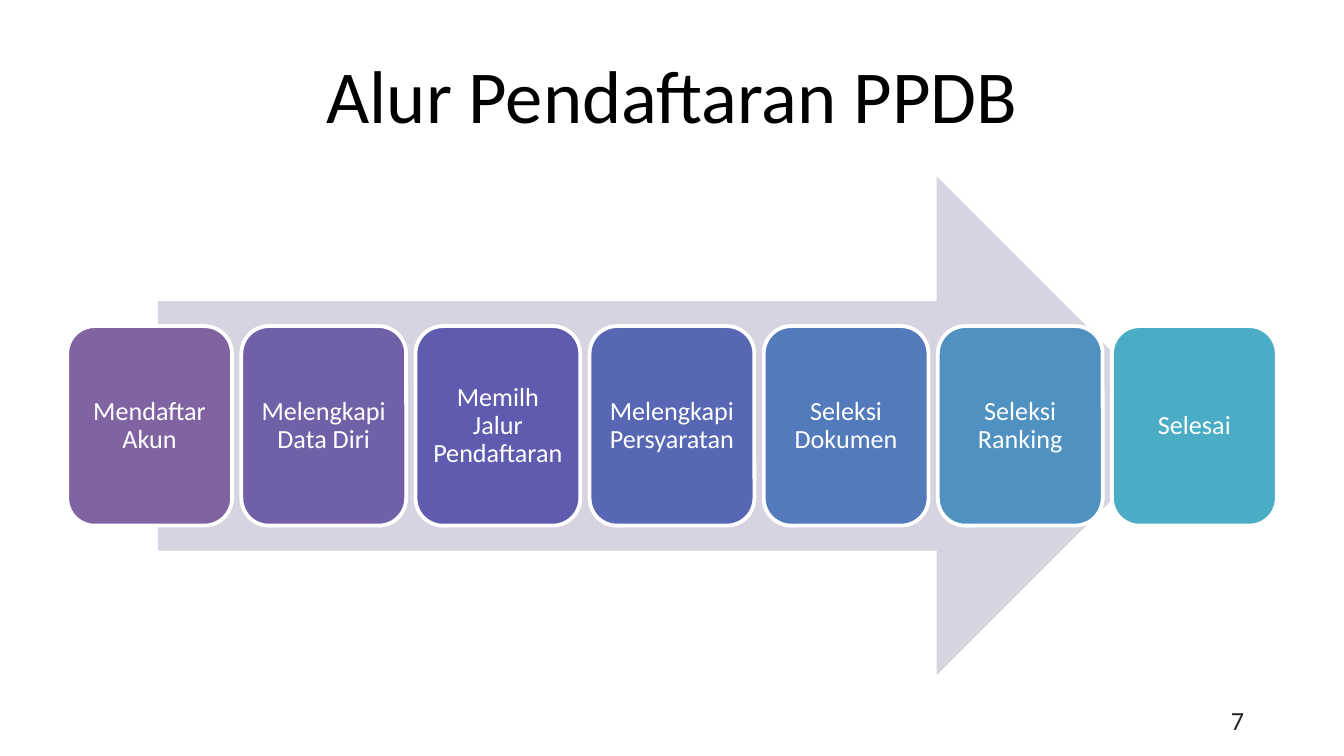
from dataclasses import dataclass

from pptx import Presentation
from pptx.dml.color import RGBColor as Rgb
from pptx.enum.shapes import MSO_SHAPE as Kind
from pptx.enum.text import MSO_ANCHOR as Anchor, PP_ALIGN as Align
from pptx.util import Pt


@dataclass(frozen=True)
class Theme:
    font: str = "Calibri"
    black: str = "000000"
    white: str = "FFFFFF"
    grey: str = "262626"
    arrow: str = "D8D3E0"
    title: int = 40
    body: int = 14


STEPS = [
    ("Mendaftar Akun", "8064A2"),
    ("Melengkapi Data Diri", "7160A8"),
    ("Memilh Jalur Pendaftaran", "5F5BAE"),
    ("Melengkapi Persyaratan", "5767B4"),
    ("Seleksi Dokumen", "537ABA"),
    ("Seleksi Ranking", "4F91C0"),
    ("Selesai", "4BACC6"),
]


class Deck:
    """Holds the theme and the slide being filled; boxes are in points."""

    def __init__(self, theme, slide):
        self.theme, self.slide = theme, slide

    def text(self, shape, words, size, color, space=1.0):
        frame = shape.text_frame
        frame.word_wrap = True
        frame.vertical_anchor = Anchor.MIDDLE
        para = frame.paragraphs[0]
        para.alignment = Align.CENTER
        para.line_spacing = space
        run = para.add_run()
        run.text = words
        run.font.name = self.theme.font
        run.font.size = Pt(size)
        run.font.color.rgb = Rgb.from_string(color)

    def title(self, words, left, top, width, height):
        shape = self.slide.shapes.title
        shape.left, shape.top = Pt(left), Pt(top)
        shape.width, shape.height = Pt(width), Pt(height)
        self.text(shape, words, self.theme.title, self.theme.black)

    def label(self, words, *box):
        shape = self.slide.shapes.add_textbox(*map(Pt, box))
        self.text(shape, words, self.theme.body, self.theme.grey)

    def shape(self, kind, fill, *box):
        shape = self.slide.shapes.add_shape(kind, *map(Pt, box))
        shape.shadow.inherit = False
        shape.fill.solid()
        shape.fill.fore_color.rgb = Rgb.from_string(fill)
        shape.line.fill.background()
        return shape

    def arrow(self, *box):
        self.shape(Kind.RIGHT_ARROW, self.theme.arrow, *box)

    def step(self, words, fill, *box):
        card = self.shape(Kind.ROUNDED_RECTANGLE, fill, *box)
        card.line.color.rgb = Rgb.from_string(self.theme.white)
        card.line.width = Pt(2)
        frame = card.text_frame
        frame.margin_left = frame.margin_right = Pt(4.2)
        frame.margin_top = frame.margin_bottom = Pt(4.2)
        self.text(card, words, self.theme.body, self.theme.white, 0.9)


def main():
    prs = Presentation()
    prs.slide_width, prs.slide_height = Pt(720), Pt(405)
    deck = Deck(Theme(), prs.slides.add_slide(prs.slide_layouts[5]))

    deck.title("Alur Pendaftaran PPDB", 36, 16.5, 648, 67.5)
    deck.label("7", 642, 375, 42, 21.6)
    deck.arrow(84.6, 94.5, 550.8, 267.3)

    left, right, width = 36, 684, 88.3
    pitch = (right - left - width) / (len(STEPS) - 1)
    for i, (words, fill) in enumerate(STEPS):
        deck.step(words, fill, left + i * pitch, 174.7, width, 106.9)

    prs.save("out.pptx")


if __name__ == "__main__":
    main()
